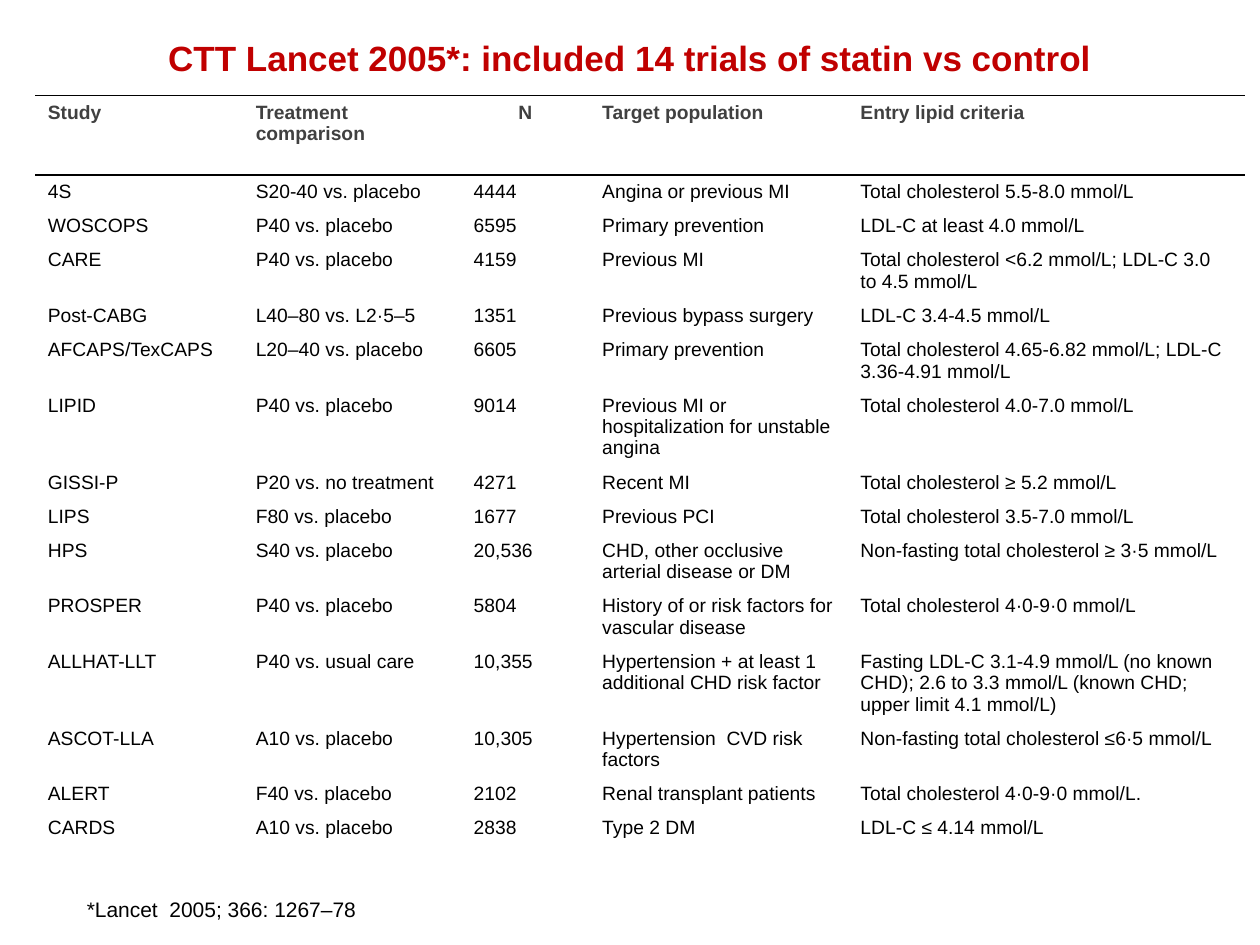
"""Build a slide that lists the statin trials in the CTT review."""
from dataclasses import astuple, dataclass

from lxml.etree import SubElement as Sub
from pptx import Presentation
from pptx.dml.color import RGBColor
from pptx.enum.text import MSO_ANCHOR as Anchor, MSO_AUTO_SIZE as Fit, PP_ALIGN as Align
from pptx.oxml.ns import qn
from pptx.util import Inches, Pt

RED = RGBColor(0xC0, 0x00, 0x00)
GREY = RGBColor(0x40, 0x40, 0x40)
BLACK = RGBColor(0x00, 0x00, 0x00)

HEAD = {"size": Pt(11), "bold": True, "name": "Arial"}
BODY = HEAD | {"bold": False}
TITLE = HEAD | {"size": Pt(20)}
NOTE = BODY | {"size": Pt(12)}
FRAME = {"word_wrap": True, "auto_size": Fit.NONE, "vertical_anchor": Anchor.TOP}
INSET = {"margin_left": Inches(0.1), "margin_right": Inches(0.1),
         "margin_top": Inches(0.05), "margin_bottom": Inches(0.05)}
PLAIN = {"first_row": False, "horz_banding": False}
WIDTHS = (1.65, 1.73, 1.02, 2.05, 3.15)


@dataclass
class Trial:
    study: str
    arms: str
    count: str
    target: str
    entry: str
    lines: int = 1


HEADS = Trial("Study", "Treatment comparison", "N", "Target population",
              "Entry lipid criteria")
TRIALS = [
    Trial("4S", "S20-40 vs. placebo", "4444", "Angina or previous MI",
          "Total cholesterol 5.5-8.0 mmol/L"),
    Trial("WOSCOPS", "P40 vs. placebo", "6595", "Primary prevention",
          "LDL-C at least 4.0 mmol/L"),
    Trial("CARE", "P40 vs. placebo", "4159", "Previous MI",
          "Total cholesterol <6.2 mmol/L; LDL-C 3.0 to 4.5 mmol/L", 2),
    Trial("Post-CABG", "L40–80 vs. L2·5–5", "1351", "Previous bypass surgery",
          "LDL-C 3.4-4.5 mmol/L"),
    Trial("AFCAPS/TexCAPS", "L20–40 vs. placebo", "6605", "Primary prevention",
          "Total cholesterol 4.65-6.82 mmol/L; LDL-C 3.36-4.91 mmol/L", 2),
    Trial("LIPID", "P40 vs. placebo", "9014",
          "Previous MI or hospitalization for unstable angina",
          "Total cholesterol 4.0-7.0 mmol/L", 3),
    Trial("GISSI-P", "P20 vs. no treatment", "4271", "Recent MI",
          "Total cholesterol ≥ 5.2 mmol/L"),
    Trial("LIPS", "F80 vs. placebo", "1677", "Previous PCI",
          "Total cholesterol 3.5-7.0 mmol/L"),
    Trial("HPS", "S40 vs. placebo", "20,536",
          "CHD, other occlusive arterial disease or DM",
          "Non-fasting total cholesterol ≥ 3·5 mmol/L", 2),
    Trial("PROSPER", "P40 vs. placebo", "5804",
          "History of or risk factors for vascular disease",
          "Total cholesterol 4·0-9·0 mmol/L", 2),
    Trial("ALLHAT-LLT", "P40 vs. usual care", "10,355",
          "Hypertension + at least 1 additional CHD risk factor",
          "Fasting LDL-C 3.1-4.9 mmol/L (no known CHD); 2.6 to 3.3 mmol/L "
          "(known CHD; upper limit 4.1 mmol/L)", 3),
    Trial("ASCOT-LLA", "A10 vs. placebo", "10,305",
          "Hypertension  CVD risk factors",
          "Non-fasting total cholesterol ≤6·5 mmol/L", 2),
    Trial("ALERT", "F40 vs. placebo", "2102", "Renal transplant patients",
          "Total cholesterol 4·0-9·0 mmol/L."),
    Trial("CARDS", "A10 vs. placebo", "2838", "Type 2 DM",
          "LDL-C ≤ 4.14 mmol/L"),
]


def apply(item, form: dict) -> None:
    for key, value in form.items():
        setattr(item, key, value)


def write(frame, text: str, form: dict, color: RGBColor, align=Align.LEFT) -> None:
    para = frame.paragraphs[0]
    para.alignment = align
    run = para.add_run()
    run.text = text
    apply(run.font, form)
    run.font.color.rgb = color


def rule(cell, sides: str) -> None:
    props = cell._tc.get_or_add_tcPr()
    for side in "LRTB":
        line = Sub(props, qn(f"a:ln{side}"), w=str(Pt(1)))
        if side in sides:
            fill = Sub(line, qn("a:solidFill"))
            Sub(fill, qn("a:srgbClr"), val=str(BLACK))
        else:
            Sub(line, qn("a:noFill"))


def fill_row(table, row: int, trial: Trial) -> None:
    top = row == 0
    form, color = (HEAD, GREY) if top else (BODY, BLACK)
    sides = "TB" if top else "T" if row == 1 else ""
    *texts, lines = astuple(trial)
    table.rows[row].height = Inches(0.63 if top else 0.1 + 0.17 * lines)
    for col, text in enumerate(texts):
        cell = table.cell(row, col)
        apply(cell, INSET | {"vertical_anchor": Anchor.TOP})
        rule(cell, sides)
        cell.fill.background()
        align = Align.CENTER if top and text == "N" else Align.LEFT
        write(cell.text_frame, text, form, color, align)


def place(left: float, top: float, width: float, height: float) -> dict:
    names = ("left", "top", "width", "height")
    return dict(zip(names, map(Inches, (left, top, width, height))))


def main() -> None:
    deck = Presentation()
    apply(deck, {"slide_width": Inches(10), "slide_height": Inches(7.5)})
    slide = deck.slides.add_slide(deck.slide_layouts[5])

    title = slide.shapes.title
    apply(title, place(0.5, 0.21, 9, 0.62))
    apply(title.text_frame, FRAME | INSET | {"margin_top": Inches(0.08)})
    write(title.text_frame, "CTT Lancet 2005*: included 14 trials of statin vs control",
          TITLE, RED, Align.CENTER)

    rows = [HEADS, *TRIALS]
    spot = place(0.28, 0.76, sum(WIDTHS), 6.25)
    table = slide.shapes.add_table(len(rows), len(WIDTHS), **spot).table
    apply(table, PLAIN)
    for column, width in zip(table.columns, WIDTHS):
        column.width = Inches(width)
    for row, trial in enumerate(rows):
        fill_row(table, row, trial)

    note = slide.shapes.add_textbox(**place(0.59, 7.07, 5.28, 0.3)).text_frame
    apply(note, FRAME | INSET | {"auto_size": Fit.SHAPE_TO_FIT_TEXT})
    write(note, "*Lancet  2005; 366: 1267–78", NOTE, BLACK)
    deck.save("out.pptx")


if __name__ == "__main__":
    main()
